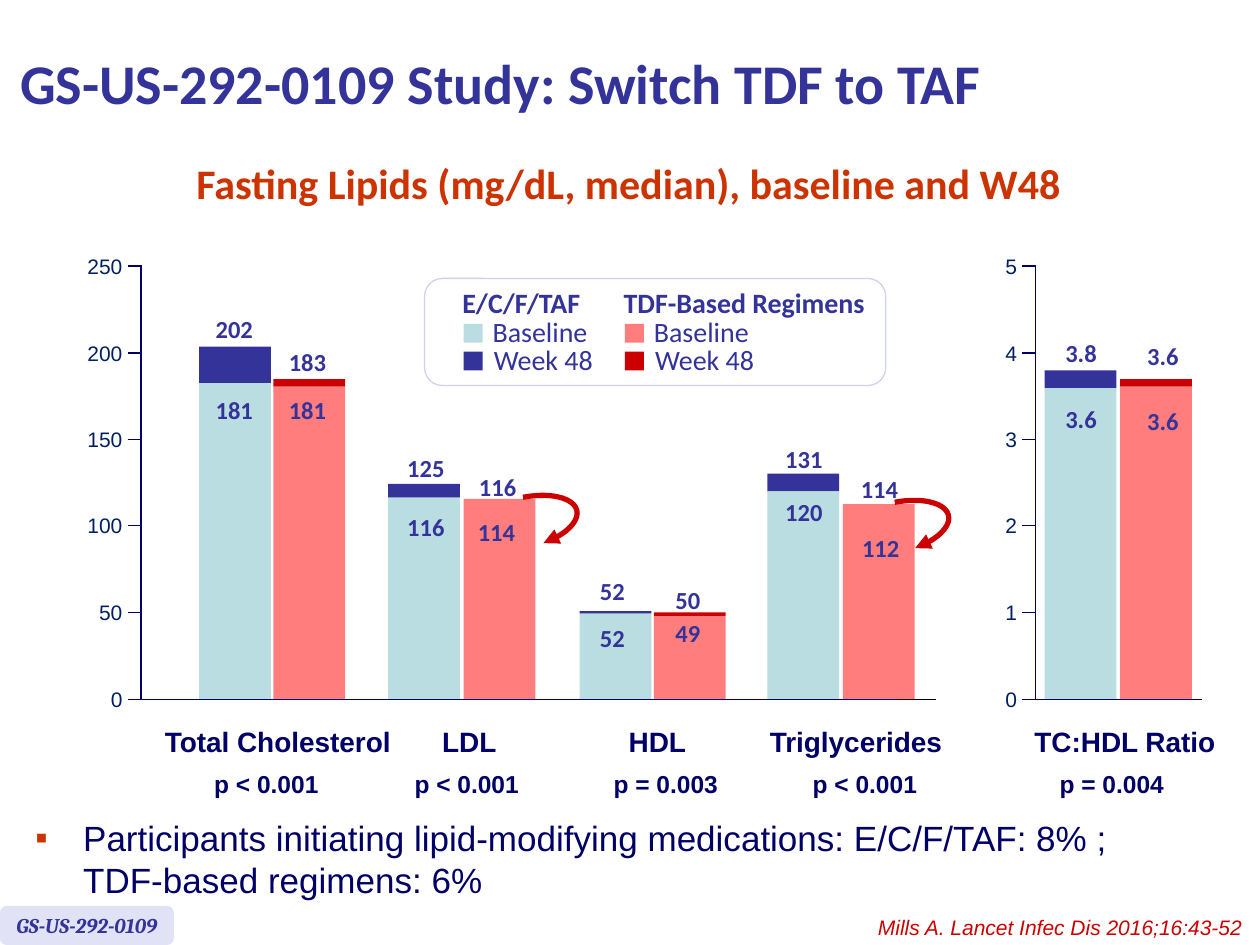
from dataclasses import dataclass

from lxml.etree import SubElement
from pptx import Presentation
from pptx.dml.color import RGBColor
from pptx.enum.shapes import MSO_CONNECTOR as Connector, MSO_SHAPE as Shape
from pptx.enum.text import MSO_ANCHOR as Anchor, MSO_AUTO_SIZE as AutoSize, PP_ALIGN as Align
from pptx.oxml.ns import qn
from pptx.util import Pt

PX = 9144


@dataclass(frozen=True)
class Theme:
    indigo: str = "333399"
    navy: str = "000066"
    tick: str = "002060"
    orange: str = "CC3300"
    red: str = "CC0000"
    pink: str = "FF7D7D"
    aqua: str = "BADDE1"
    lavender: str = "E2E2F6"
    outline: str = "D0D0F0"
    white: str = "FFFFFF"
    black: str = "000000"
    title_size: int = 32
    subtitle_size: int = 24
    body_size: int = 20
    label_size: int = 16
    value_size: int = 14
    small_size: int = 12
    heading_font: str = "Calibri"
    body_font: str = "Arial"
    badge_font: str = "Cambria"


theme = Theme()
TIGHT = (0, 0, 0, 0)
VALUE_INSETS = (0, 6, 0, 0)
NORMAL_INSETS = (10, 5, 10, 5)


def write(shape, text, font, size, color, bold=False, italic=False, align=Align.LEFT,
          insets=NORMAL_INSETS, anchor=Anchor.TOP, wrap=True, spacing=1.0):
    frame = shape.text_frame
    frame.text = text
    frame.word_wrap = wrap
    frame.auto_size = AutoSize.NONE
    frame.vertical_anchor = anchor
    frame.margin_left, frame.margin_top, frame.margin_right, frame.margin_bottom = [
        inset * PX for inset in insets]
    paragraph = frame.paragraphs[0]
    paragraph.alignment = align
    paragraph.line_spacing = spacing
    paragraph.space_before = Pt(0)
    for run in paragraph.runs:
        run.font.name = font
        run.font.size = Pt(size)
        run.font.bold = bold
        run.font.italic = italic
        run.font.color.rgb = RGBColor.from_string(color)
    return paragraph


def add_block(kind, left, top, width, height, fill):
    shape = slide.shapes.add_shape(kind, left * PX, top * PX, width * PX, height * PX)
    shape.shadow.inherit = False
    shape.fill.solid()
    shape.fill.fore_color.rgb = RGBColor.from_string(fill)
    shape.line.fill.background()
    return shape


presentation = Presentation()
presentation.slide_width = 1000 * PX
presentation.slide_height = 750 * PX
slide = presentation.slides.add_slide(presentation.slide_layouts[1])

title, body = slide.placeholders
title.left, title.top, title.width, title.height = 6 * PX, 5 * PX, 896 * PX, 121 * PX
write(title, "GS-US-292-0109 Study: Switch TDF to TAF", theme.heading_font,
      theme.title_size, theme.indigo, bold=True, anchor=Anchor.MIDDLE)

body.left, body.top, body.width, body.height = 18 * PX, 643 * PX, 883 * PX, 39 * PX
bullet_paragraph = write(
    body, "Participants initiating lipid-modifying medications: E/C/F/TAF: 8% ; TDF-based regimens: 6%",
    theme.body_font, theme.body_size, theme.navy)
properties = bullet_paragraph._p.get_or_add_pPr()
properties.set("marL", str(38 * PX))
properties.set("indent", str(-38 * PX))
bullet_color = SubElement(properties, qn("a:buClr"))
SubElement(bullet_color, qn("a:srgbClr"), val=theme.orange)
SubElement(properties, qn("a:buFont"), typeface=theme.body_font)
SubElement(properties, qn("a:buChar"), char="▪")

subtitle = slide.shapes.add_textbox(142 * PX, 120 * PX, 714 * PX, 50 * PX)
write(subtitle, "Fasting Lipids (mg/dL, median), baseline and W48", theme.heading_font,
      theme.subtitle_size, theme.orange, bold=True, align=Align.CENTER, wrap=False)

badge = add_block(Shape.ROUNDED_RECTANGLE, 0, 719, 138, 31, theme.lavender)
write(badge, "GS-US-292-0109", theme.badge_font, theme.small_size, theme.indigo, bold=True,
      italic=True, align=Align.CENTER, anchor=Anchor.MIDDLE, wrap=False)

citation = slide.shapes.add_textbox(532 * PX, 721 * PX, 464 * PX, 30 * PX)
write(citation, "Mills A. Lancet Infec Dis 2016;16:43-52", theme.body_font,
      theme.small_size, theme.red, italic=True, align=Align.RIGHT)

categories = [
    (86, 269, "Total Cholesterol", Align.CENTER, 170, "p < 0.001"),
    (351, 43, "LDL", Align.LEFT, 329, "p < 0.001"),
    (499, 46, "HDL", Align.LEFT, 487, "p = 0.003"),
    (611, 138, "Triglycerides", Align.LEFT, 645, "p < 0.001"),
    (821, 145, "TC:HDL Ratio", Align.LEFT, 841, "p = 0.004"),
]
for left, width, name, align, p_left, p_text in categories:
    category = slide.shapes.add_textbox(left * PX, 578 * PX, width * PX, 24 * PX)
    write(category, name, theme.body_font, theme.label_size, theme.navy, bold=True,
          align=align, insets=TIGHT, wrap=align == Align.CENTER, spacing=0.9)
    p_value = slide.shapes.add_textbox(p_left * PX, 613 * PX, 90 * PX, 22 * PX)
    write(p_value, p_text, theme.body_font, theme.value_size, theme.navy, bold=True,
          insets=TIGHT, spacing=0.9)

legend = add_block(Shape.ROUNDED_RECTANGLE, 337, 221, 366, 85, theme.white)
legend.line.color.rgb = RGBColor.from_string(theme.outline)
legend.line.width = Pt(0.75)
legend_columns = [
    (367, 125, "E/C/F/TAF", theme.aqua, theme.indigo),
    (495, 208, "TDF-Based Regimens", theme.pink, theme.red),
]
for left, width, regimen, baseline_color, week_color in legend_columns:
    heading = slide.shapes.add_textbox(left * PX, 227 * PX, width * PX, 30 * PX)
    write(heading, regimen, theme.heading_font, theme.label_size, theme.indigo, bold=True,
          insets=TIGHT, anchor=Anchor.MIDDLE, spacing=0.9)
    for top, offset, name, color in [(250, 24, "Baseline", baseline_color),
                                     (272, 25, "Week 48", week_color)]:
        add_block(Shape.RECTANGLE, left + 1, top + 7, 15, 15, color)
        entry = slide.shapes.add_textbox((left + offset) * PX, top * PX, 125 * PX, 30 * PX)
        write(entry, name, theme.heading_font, theme.label_size, theme.indigo,
              insets=TIGHT, anchor=Anchor.MIDDLE, spacing=0.9)

axis_bottom = 555
bar_width = 57
taf_bars = [(158, 275, 304), (308, 384, 395), (460, 485, 487), (609, 376, 390), (829, 294, 308)]
tdf_bars = [(217, 301, 307), (368, 396, 396), (519, 486, 489), (669, 400, 400), (889, 301, 307)]
for bars, baseline_color, week_color in [(taf_bars, theme.aqua, theme.indigo),
                                         (tdf_bars, theme.pink, theme.red)]:
    for left, week_top, baseline_top in bars:
        if week_top < baseline_top:
            add_block(Shape.RECTANGLE, left, week_top, bar_width, baseline_top - week_top, week_color)
        add_block(Shape.RECTANGLE, left, baseline_top, bar_width, axis_bottom - baseline_top,
                  baseline_color)

axes = [(112, 743, 102, 107, 50), (822, 954, 811, 817, 1)]
segments = [(713, axis_bottom, 743, theme.black, 0.75)]
for left, right, tick_left, label_right, step in axes:
    builder = slide.shapes.build_freeform(right, axis_bottom, scale=PX)
    builder.add_line_segments([(left, axis_bottom), (left, 210)], close=False)
    axis = builder.convert_to_shape()
    axis.shadow.inherit = False
    axis.fill.background()
    axis.line.color.rgb = RGBColor.from_string(theme.navy)
    axis.line.width = Pt(0.88)
    for index in range(6):
        tick_top = round(axis_bottom - 68.8 * index)
        segments.append((tick_left, tick_top, left, theme.navy, 0.88))
        tick_text = str(index * step)
        label_width = 20 + 9 * len(tick_text)
        label = slide.shapes.add_textbox((label_right - label_width) * PX, (tick_top - 15) * PX,
                                         label_width * PX, 30 * PX)
        write(label, tick_text, theme.body_font, theme.small_size, theme.tick,
              align=Align.RIGHT, wrap=False)

for left, top, right, color, weight in segments:
    line = slide.shapes.add_connector(Connector.STRAIGHT, left * PX, top * PX, right * PX, top * PX)
    line.line.color.rgb = RGBColor.from_string(color)
    line.line.width = Pt(weight)
    SubElement(line._element.spPr, qn("a:effectLst"))

bar_values = [
    (156, 246, "202"), (156, 310, "181"), (214, 272, "183"), (214, 310, "181"),
    (308, 356, "125"), (308, 403, "116"), (365, 371, "116"), (364, 407, "114"),
    (456, 454, "52"), (456, 491, "52"), (516, 461, "50"), (516, 487, "49"),
    (608, 349, "131"), (608, 391, "120"), (668, 373, "114"), (669, 420, "112"),
    (828, 265, "3.8"), (828, 317, "3.6"), (893, 267, "3.6"), (893, 319, "3.6"),
]
for left, top, value in bar_values:
    value_box = slide.shapes.add_textbox(left * PX, top * PX, 60 * PX, 30 * PX)
    write(value_box, value, theme.heading_font, theme.value_size, theme.indigo, bold=True,
          align=Align.CENTER, insets=VALUE_INSETS, spacing=0.9)

for left, top in [(372, 395), (667, 399)]:
    arrow = slide.shapes.add_shape(Shape.ARC, left * PX, top * PX, 87 * PX, 40 * PX)
    arrow.adjustments[0] = 169.25
    arrow.adjustments[1] = 35.14
    arrow.rotation = 346.8
    arrow.shadow.inherit = False
    arrow.fill.background()
    arrow.line.color.rgb = RGBColor.from_string(theme.red)
    arrow.line.width = Pt(3)
    SubElement(arrow.line._get_or_add_ln(), qn("a:tailEnd"), type="triangle")

presentation.save("out.pptx")
